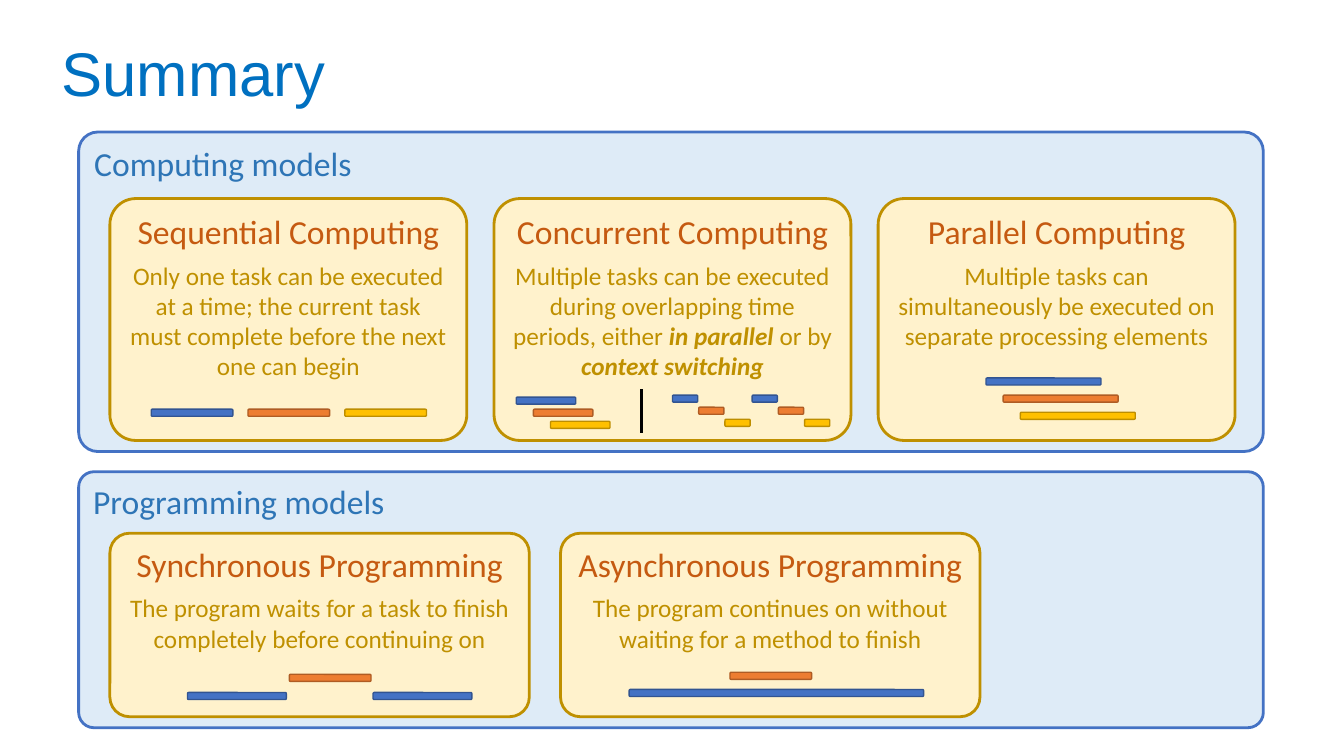
from lxml import etree
from pptx import Presentation
from pptx import util as u
from pptx.dml.color import RGBColor
from pptx.enum import shapes, text
from pptx.oxml import ns

PX = 9144

WHITE = RGBColor(0xFF, 0xFF, 0xFF)
BLACK = RGBColor(0, 0, 0)
TITLE_BLUE = RGBColor(0x00, 0x70, 0xC0)
PANEL_FILL = RGBColor(0xDE, 0xEB, 0xF7)
PANEL_TEXT = RGBColor(0x2E, 0x75, 0xB6)
CARD_FILL = RGBColor(0xFF, 0xF2, 0xCC)
CARD_LINE = RGBColor(0xBF, 0x90, 0x00)
CARD_HEADING = RGBColor(0xC5, 0x5A, 0x11)
BLUE = RGBColor(0x44, 0x72, 0xC4)
ORANGE = RGBColor(0xED, 0x7D, 0x31)
YELLOW = RGBColor(0xFF, 0xC0, 0x00)
BAR_LINES = {
    BLUE: RGBColor(0x32, 0x54, 0x91),
    ORANGE: RGBColor(0xAF, 0x5C, 0x24),
    YELLOW: RGBColor(0xBD, 0x8E, 0x00),
}
TASK_COLORS = (BLUE, ORANGE, YELLOW)
BAR_HEIGHT = 7


def add_text(paragraph, content, size, color, font="Calibri", emphasis=None,
             align=text.PP_ALIGN.LEFT, after=0):
    paragraph.alignment = align
    paragraph.space_after = u.Pt(after)
    run = paragraph.add_run()
    run.text = content
    run.font.name = font
    run.font.size = u.Pt(size)
    run.font.color.rgb = color
    run.font.bold = run.font.italic = emphasis


def add_round_box(parent, box, fill, line, width, corner=None):
    shape = parent.add_shape(shapes.MSO_SHAPE.ROUNDED_RECTANGLE,
                             *(value * PX for value in box))
    shape.shadow.inherit = False
    shape.fill.solid()
    shape.fill.fore_color.rgb = fill
    shape.line.color.rgb = line
    shape.line.width = u.Pt(width)
    if corner is not None:
        shape.adjustments[0] = corner
    return shape


def top_text_frame(shape):
    frame = shape.text_frame
    frame.word_wrap = True
    frame.vertical_anchor = text.MSO_ANCHOR.TOP
    return frame


def add_title(slide, box):
    title = slide.shapes.title
    title.left, title.top, title.width, title.height = (value * PX for value in box)
    title.text_frame.vertical_anchor = text.MSO_ANCHOR.MIDDLE
    paragraph = title.text_frame.paragraphs[0]
    paragraph.line_spacing = 0.9
    add_text(paragraph, "Summary", 44, TITLE_BLUE, font="Arial")


def add_panel(slide, box, heading):
    panel = add_round_box(slide.shapes, box, PANEL_FILL, BLUE, 2, corner=0.06)
    add_text(top_text_frame(panel).paragraphs[0], heading, 24, PANEL_TEXT, after=12)


def add_card(slide, box, heading, body):
    card = add_round_box(slide.shapes, box, CARD_FILL, CARD_LINE, 2, corner=0.107)
    frame = top_text_frame(card)
    center = text.PP_ALIGN.CENTER
    add_text(frame.paragraphs[0], heading, 24, CARD_HEADING, align=center, after=6)
    paragraph = frame.add_paragraph()
    for content, emphasis in body:
        add_text(paragraph, content, 18, CARD_LINE, emphasis=emphasis, align=center)


def add_bars(slide, box, bars):
    group = slide.shapes.add_group_shape()
    for left, top, width, color in bars:
        add_round_box(group.shapes,
                      (box[0] + left, box[1] + top, width, BAR_HEIGHT),
                      color, BAR_LINES[color], 1)


def add_divider(slide, box):
    x = (box[0] + 146) * PX
    line = slide.shapes.add_connector(shapes.MSO_CONNECTOR.STRAIGHT,
                                      x, (box[1] + 189) * PX, x, (box[1] + 233) * PX)
    line.line.color.rgb = BLACK
    line.line.width = u.Pt(2)
    etree.SubElement(line._element.spPr, ns.qn("a:effectLst"))


def add_computing_models(slide, box):
    add_panel(slide, box, "Computing models")
    cards = (
        ("Sequential Computing",
         [("Only one task can be executed at a time; the current task must "
           "complete before the next one can begin", None)]),
        ("Concurrent Computing",
         [("Multiple tasks can be executed during overlapping time periods, either ", None),
          ("in parallel ", True), ("or by ", None), ("context switching", True)]),
        ("Parallel Computing",
         [("Multiple tasks can simultaneously be executed on separate "
           "processing elements", None)]),
    )
    boxes = [(box[0] + 31 + 381 * i, box[1] + 66, 354, 240) for i in range(len(cards))]
    for card_box, (heading, body) in zip(boxes, cards):
        add_card(slide, card_box, heading, body)

    sequential, concurrent, parallel = boxes
    tasks = list(enumerate(TASK_COLORS))
    add_bars(slide, sequential, [(41 + 96 * i, 209, 81, color) for i, color in tasks])
    add_bars(slide, concurrent,
             [(22 + 17 * i, 197 + 12 * i, 59, color) for i, color in tasks])
    add_bars(slide, concurrent,
             [(177 + 79 * turn + 26 * i, 195 + 12 * i, 25, color)
              for turn in range(2) for i, color in tasks])
    add_bars(slide, parallel,
             [(107 + 17 * i, 178 + 17 * i, 114, color) for i, color in tasks])
    add_divider(slide, concurrent)


def add_programming_models(slide, box):
    add_panel(slide, box, "Programming models")
    cards = (
        ("Synchronous Programming",
         "The program waits for a task to finish completely before continuing on",
         [(77, 158, 98, BLUE), (178, 140, 81, ORANGE), (261, 158, 98, BLUE)]),
        ("Asynchronous Programming",
         "The program continues on without waiting for a method to finish",
         [(68, 155, 292, BLUE), (168, 138, 81, ORANGE)]),
    )
    for i, (heading, body, bars) in enumerate(cards):
        card_box = (box[0] + 31 + 447 * i, box[1] + 61, 416, 182)
        add_card(slide, card_box, heading, [(body, None)])
        add_bars(slide, card_box, bars)


def main():
    presentation = Presentation()
    presentation.slide_width = 1333 * PX
    presentation.slide_height = 750 * PX
    slide = presentation.slides.add_slide(presentation.slide_layouts[5])
    slide.background.fill.solid()
    slide.background.fill.fore_color.rgb = WHITE
    add_title(slide, (51, 31, 1172, 89))
    add_computing_models(slide, (78, 131, 1175, 317))
    add_programming_models(slide, (78, 468, 1175, 254))
    presentation.save("out.pptx")


if __name__ == "__main__":
    main()
